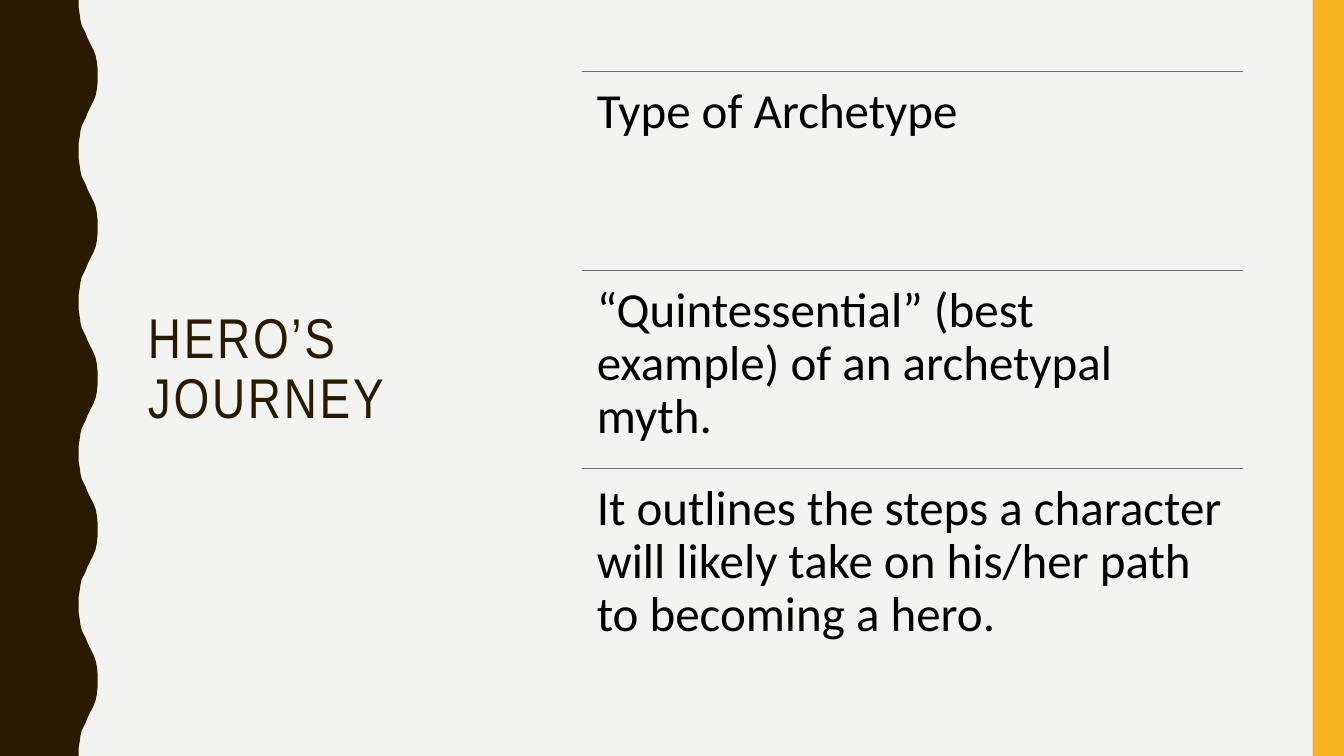
import pptx
import pptx.util
import pptx.dml.color
import pptx.enum.shapes
import pptx.enum.text
import pptx.oxml
import pptx.oxml.ns
from pptx.util import Cm

TITLE = "HERO’S JOURNEY"
POINTS = [
    "Type of Archetype",
    "“Quintessential” (best example) of an archetypal myth.",
    "It outlines the steps a character will likely take on his/her path "
    "to becoming a hero.",
]
BROWN, YELLOW, PAPER, RULE, BLACK = "2A1A00", "F8B323", "F3F3F2", "826276", "000000"

# All lengths in centimetres
SLIDE_WIDTH, SLIDE_HEIGHT = 33.87, 19.05
STRIPE_WIDTH = 0.79
LIST_LEFT, LIST_TOP, LIST_WIDTH, ROW_HEIGHT = 14.66, 1.8, 16.66, 5.0
HALF_WAVES = 10
# Trough to crest: (x, y)
HALF_WAVE = [
    (1.98, 0), (1.98, 0.18), (2.01, 0.36), (2.03, 0.51), (2.06, 0.64),
    (2.11, 0.74), (2.16, 0.84), (2.21, 0.97), (2.26, 1.07), (2.31, 1.17),
    (2.36, 1.27), (2.41, 1.4), (2.44, 1.55), (2.46, 1.73),
]


def color(value):
    return pptx.dml.color.RGBColor.from_string(value)


def paint(shape, fill):
    shape.shadow.inherit = False
    shape.fill.solid()
    shape.fill.fore_color.rgb = color(fill)
    shape.line.fill.background()


def add_text(slide, box, text, font, size, fill, inset=None, anchor="TOP"):
    shape = slide.shapes.add_textbox(*map(Cm, box))
    frame = shape.text_frame
    frame.word_wrap = True
    frame.vertical_anchor = pptx.enum.text.MSO_ANCHOR[anchor]
    if inset is not None:
        frame.margin_left = frame.margin_right = Cm(inset)
        frame.margin_top = frame.margin_bottom = Cm(inset)
    paragraph = frame.paragraphs[0]
    paragraph.line_spacing = 0.9
    run = paragraph.add_run()
    run.text = text
    run.font.name = font
    run.font.size = pptx.util.Pt(size)
    run.font.color.rgb = color(fill)
    return run


def add_rule(slide, left, top, width):
    rule = slide.shapes.add_connector(
        pptx.enum.shapes.MSO_CONNECTOR.STRAIGHT,
        Cm(left), Cm(top), Cm(left + width), Cm(top))
    rule.line.color.rgb = color(RULE)
    rule.line.width = pptx.util.Pt(0.5)
    properties = rule._element.find(pptx.oxml.ns.qn("p:spPr"))
    properties.append(pptx.oxml.parse_xml(
        f"<a:effectLst {pptx.oxml.ns.nsdecls('a')}/>"))


def wave_points():
    """Edge of the wavy band from top to bottom, every second half mirrored."""
    height = SLIDE_HEIGHT / HALF_WAVES
    crest = (2.46, height)
    points = []
    for index in range(HALF_WAVES):
        half = HALF_WAVE + [crest]
        if index % 2:
            half = [(x, height - y) for x, y in reversed(half)]
        points += [(x, index * height + y) for x, y in half[:-1]]
    return points + [(HALF_WAVE[0][0], SLIDE_HEIGHT)]


def add_wavy_band(slide):
    outline = [(x, y) for x, y in wave_points()] + [(0, SLIDE_HEIGHT)]
    builder = slide.shapes.build_freeform(0, 0)
    builder.add_line_segments([(Cm(x), Cm(y)) for x, y in outline], close=True)
    paint(builder.convert_to_shape(), BROWN)


def main():
    presentation = pptx.Presentation()
    presentation.slide_width = Cm(SLIDE_WIDTH)
    presentation.slide_height = Cm(SLIDE_HEIGHT)
    slide = presentation.slides.add_slide(presentation.slide_layouts[6])
    slide.background.fill.solid()
    slide.background.fill.fore_color.rgb = color(PAPER)

    add_wavy_band(slide)
    stripe = slide.shapes.add_shape(
        pptx.enum.shapes.MSO_SHAPE.RECTANGLE,
        Cm(SLIDE_WIDTH - STRIPE_WIDTH), 0, Cm(STRIPE_WIDTH), Cm(SLIDE_HEIGHT))
    paint(stripe, YELLOW)

    title = add_text(slide, (3.48, 1.8, 9.4, 15.06), TITLE,
                     "Arial Narrow", 40, BROWN, anchor="MIDDLE")
    title.font._element.set("spc", "200")

    for index, point in enumerate(POINTS):
        top = LIST_TOP + index * ROW_HEIGHT
        add_rule(slide, LIST_LEFT, top, LIST_WIDTH)
        add_text(slide, (LIST_LEFT, top, LIST_WIDTH, ROW_HEIGHT), point,
                 "Calibri", 35, BLACK, inset=0.38)

    presentation.save("out.pptx")


if __name__ == "__main__":
    main()
